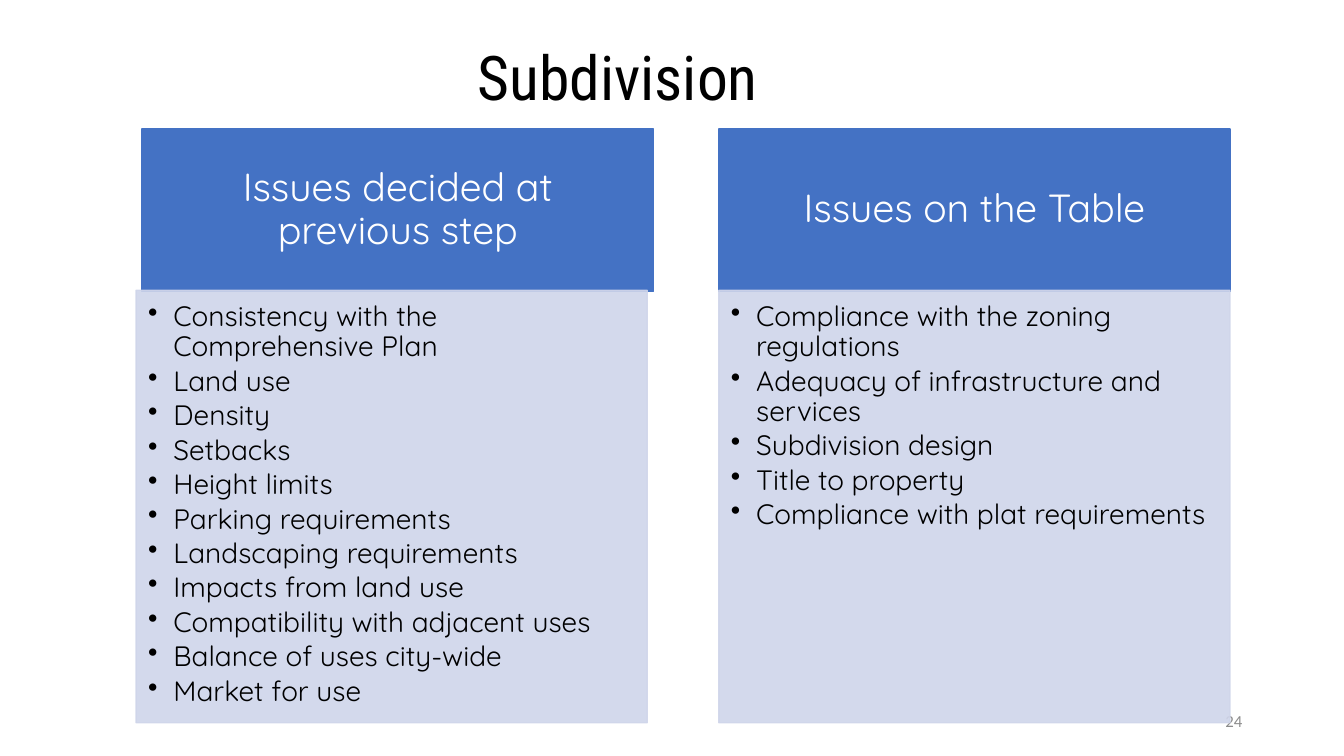
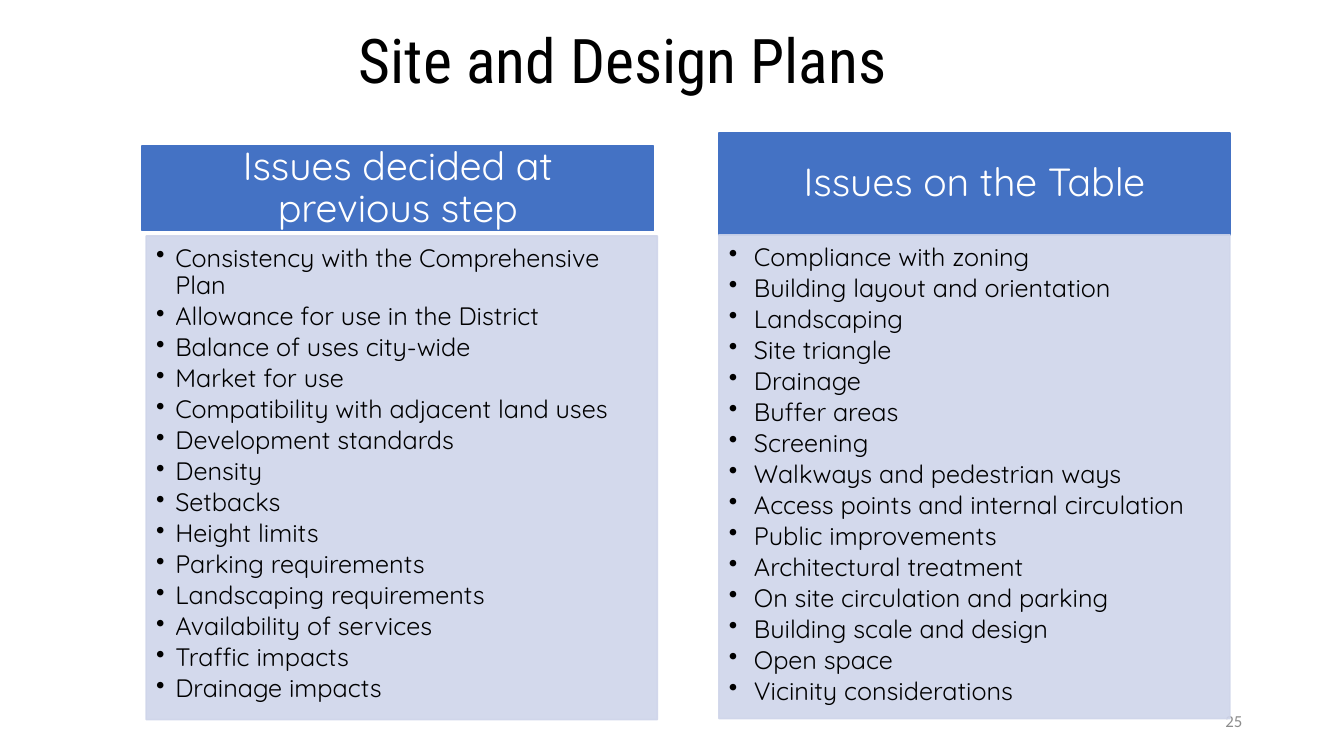
from lxml.etree import SubElement
from pptx import Presentation
from pptx.dml.color import RGBColor
from pptx.enum.shapes import MSO_SHAPE
from pptx.enum.text import MSO_ANCHOR as Anchor, PP_ALIGN as Align
from pptx.oxml.ns import qn
from pptx.util import Inches, Pt

BLACK = RGBColor(0x00, 0x00, 0x00)
WHITE = RGBColor(0xFF, 0xFF, 0xFF)
GRAY = RGBColor(0x8C, 0x8C, 0x8C)
BLUE = RGBColor(0x44, 0x72, 0xC4)
PALE_BLUE = RGBColor(0xCF, 0xD5, 0xEA)

TITLE_FONT, BODY_FONT, NUMBER_FONT = "Roboto Condensed", "Quicksand", "Calibri"
COLUMN_WIDTH = 5.07
HEADING_INSETS = (0.22, 0.12, 0.22, 0.12)
DECIDED = "Issues decided at previous step"
ON_TABLE = "Issues on the Table"

SLIDES = [
    {
        "title": "Subdivision", "title_at": (0.38, 0.31), "number": "24",
        "size": 20, "insets": (0.12, 0.12, 0.16, 0.17), "list_height": 4.29,
        "columns": [
            {
                "heading": DECIDED, "heading_at": (1.41, 1.28), "heading_height": 1.61,
                "list_at": (1.35, 2.88), "indent": 0.25,
                "issues": [
                    "Consistency with the Comprehensive Plan", "Land use", "Density",
                    "Setbacks", "Height limits", "Parking requirements",
                    "Landscaping requirements", "Impacts from land use",
                    "Compatibility with adjacent uses", "Balance of uses city-wide",
                    "Market for use",
                ],
            },
            {
                "heading": ON_TABLE, "heading_at": (7.13, 1.28), "heading_height": 1.61,
                "list_at": (7.13, 2.88), "indent": 0.25,
                "issues": [
                    "Compliance with the zoning regulations",
                    "Adequacy of infrastructure and services", "Subdivision design",
                    "Title to property", "Compliance with plat requirements",
                ],
            },
        ],
    },
    {
        "title": "Site and Design Plans ", "title_at": (0.5, 0.15), "number": "25",
        "size": 18, "insets": (0.1, 0.1, 0.14, 0.16), "list_height": 4.8,
        "columns": [
            {
                "heading": DECIDED, "heading_at": (1.41, 1.45), "heading_height": 0.84,
                "list_at": (1.45, 2.34), "indent": 0.19,
                "issues": [
                    "Consistency with the Comprehensive Plan",
                    "Allowance for use in the District", "Balance of uses city-wide",
                    "Market for use", "Compatibility with adjacent land uses",
                    "Development standards", "Density", "Setbacks", "Height limits",
                    "Parking requirements", "Landscaping requirements",
                    "Availability of services", "Traffic impacts", "Drainage impacts",
                ],
            },
            {
                "heading": ON_TABLE, "heading_at": (7.13, 1.32), "heading_height": 1.01,
                "list_at": (7.13, 2.33), "indent": 0.25,
                "issues": [
                    "Compliance with zoning", "Building layout and orientation",
                    "Landscaping", "Site triangle", "Drainage", "Buffer areas",
                    "Screening", "Walkways and pedestrian ways",
                    "Access points and internal circulation", "Public improvements",
                    "Architectural treatment", "On site circulation and parking",
                    "Building scale and design", "Open space", "Vicinity considerations",
                ],
            },
        ],
    },
]


def style(paragraph, font, size, color, align, spacing=0.9):
    paragraph.alignment = align
    paragraph.line_spacing = spacing
    paragraph.font.name = font
    paragraph.font.size = Pt(size)
    paragraph.font.color.rgb = color


def prepare(frame, anchor, insets=(0.1, 0.05, 0.1, 0.05)):
    frame.word_wrap = True
    frame.vertical_anchor = anchor
    (frame.margin_left, frame.margin_top,
     frame.margin_right, frame.margin_bottom) = map(Inches, insets)
    return frame


def add_label(slide, text, at, extent, **look):
    box = slide.shapes.add_textbox(*map(Inches, at + extent))
    paragraph = prepare(box.text_frame, Anchor.MIDDLE).paragraphs[0]
    paragraph.text = text
    style(paragraph, **look)


def add_panel(slide, at, height, color, opacity=None):
    panel = slide.shapes.add_shape(
        MSO_SHAPE.RECTANGLE, *map(Inches, at + (COLUMN_WIDTH, height)))
    panel.shadow.inherit = False
    panel.line.width = Pt(1)
    for paint in (panel.fill, panel.line.fill):
        paint.solid()
        paint.fore_color.rgb = color
    if opacity:
        for tint in panel._element.spPr.iter(qn("a:srgbClr")):
            SubElement(tint, qn("a:alpha"), val=str(opacity * 1000))
    return panel.text_frame


def add_bullet(paragraph, indent):
    properties = paragraph._p.get_or_add_pPr()
    properties.set("marL", str(Inches(indent)))
    properties.set("indent", str(-Inches(indent)))
    SubElement(properties, qn("a:buChar"), char="•")


def add_column(slide, column, size, insets, list_height):
    heading = prepare(
        add_panel(slide, column["heading_at"], column["heading_height"], BLUE),
        Anchor.MIDDLE, HEADING_INSETS).paragraphs[0]
    heading.text = column["heading"]
    style(heading, BODY_FONT, 28, WHITE, Align.CENTER)

    issues = prepare(
        add_panel(slide, column["list_at"], list_height, PALE_BLUE, opacity=90),
        Anchor.TOP, insets)
    issues.text = "\n".join(column["issues"])
    for issue in issues.paragraphs:
        add_bullet(issue, column["indent"])
        style(issue, BODY_FONT, size, BLACK, Align.LEFT)
        issue.space_after = Pt(0.15 * size)


def main():
    """Build the two slides that compare decided and open issues."""
    deck = Presentation()
    deck.slide_width, deck.slide_height = Inches(13.33), Inches(7.5)
    for content in SLIDES:
        slide = deck.slides.add_slide(deck.slide_layouts[6])
        add_label(slide, content["title"], content["title_at"], (11.5, 0.97),
                  font=TITLE_FONT, size=44, color=BLACK, align=Align.CENTER)
        add_label(slide, content["number"], (9.42, 6.95), (3, 0.4),
                  font=NUMBER_FONT, size=12, color=GRAY, align=Align.RIGHT, spacing=1.0)
        for column in content["columns"]:
            add_column(slide, column, content["size"], content["insets"],
                       content["list_height"])
    deck.save("out.pptx")


if __name__ == "__main__":
    main()
